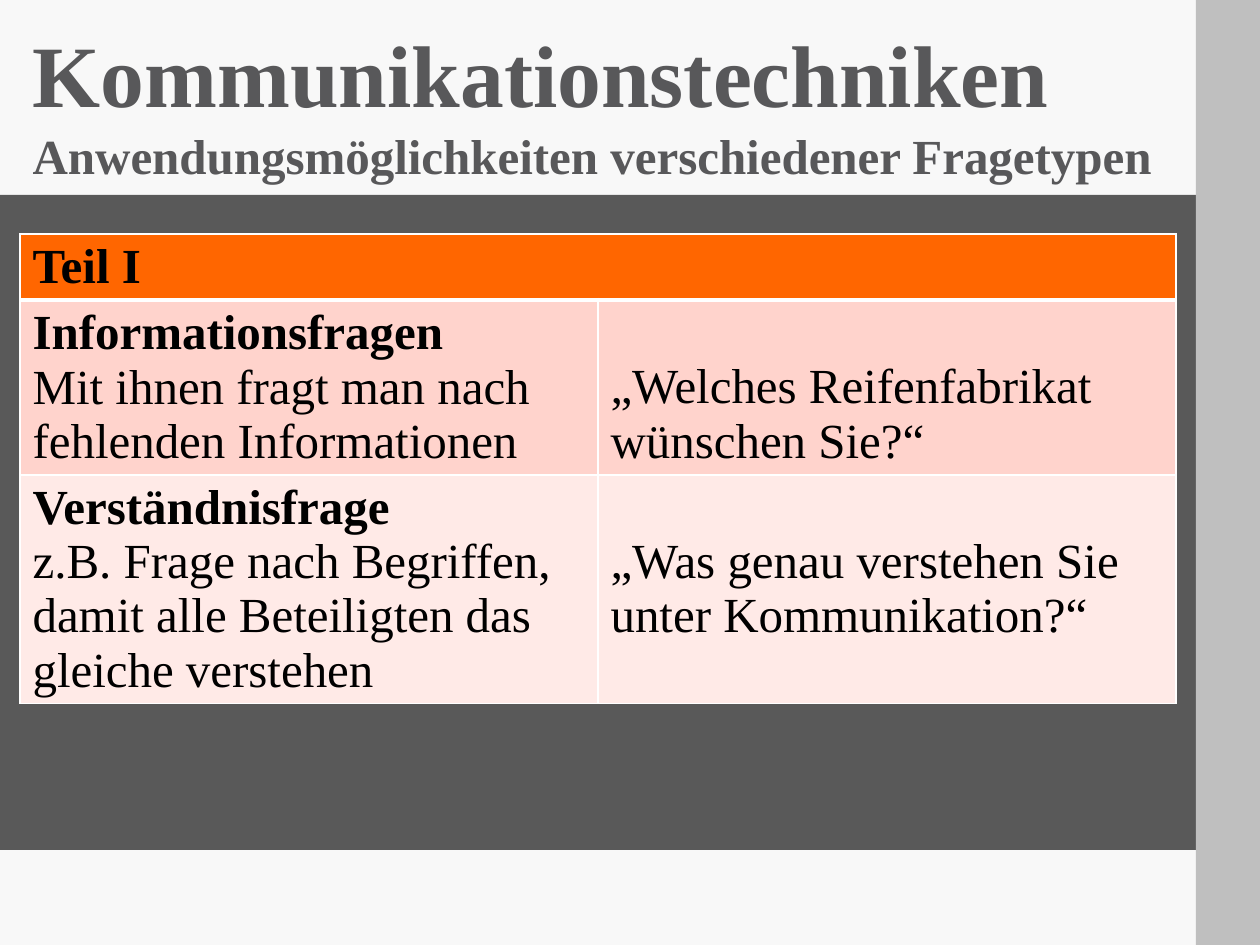
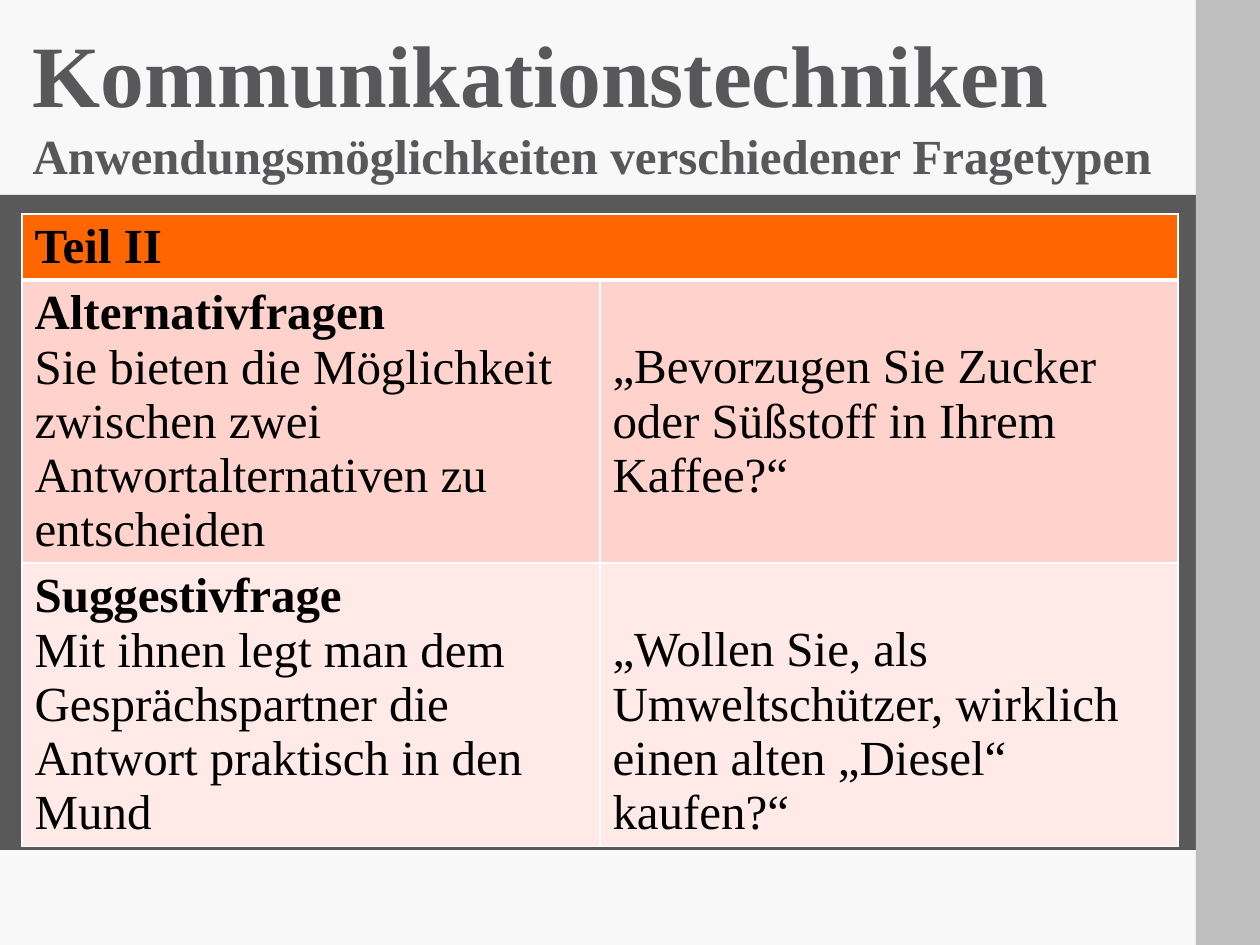
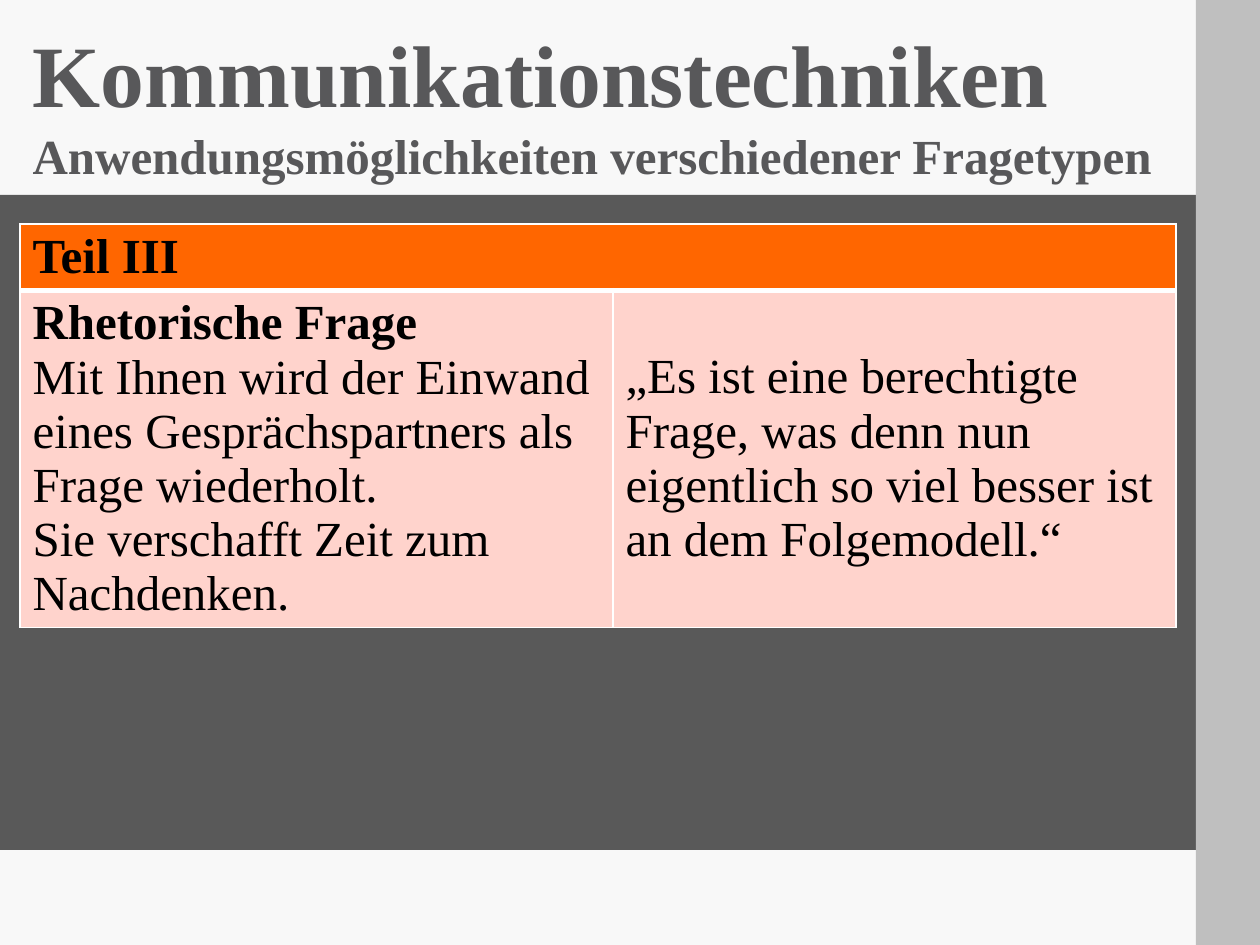
"""Build three slides on question types, each with a title and a table."""
from dataclasses import dataclass

from lxml.etree import SubElement
from pptx import Presentation
from pptx.dml.color import RGBColor
from pptx.enum.shapes import MSO_SHAPE as Shape
from pptx.enum.text import MSO_ANCHOR as Anchor, MSO_AUTO_SIZE as Fit, PP_ALIGN as Align
from pptx.oxml.ns import qn
from pptx.util import Emu, Pt

FONT = "Times New Roman"
PAPER = RGBColor(0xF8, 0xF8, 0xF8)
DARK = RGBColor(0x59, 0x59, 0x59)
SILVER = RGBColor(0xBF, 0xBF, 0xBF)
SLATE = RGBColor(0x58, 0x58, 0x5A)
BLACK = RGBColor(0, 0, 0)
WHITE = RGBColor(0xFF, 0xFF, 0xFF)
ORANGE = RGBColor(0xFF, 0x66, 0x00)
ROSE = RGBColor(0xFF, 0xD3, 0xCC)
BLUSH = RGBColor(0xFF, 0xEA, 0xE7)
TINTS = (ROSE, BLUSH)

WIDTH, HEIGHT = 1260, 945
LEFT, SPAN = 20, 1156
LINE, PAD = 54, 6
BODY = 28
THIN, THICK = 1, 3


@dataclass(frozen=True)
class Band:
    left: int
    top: int
    width: int
    height: int
    color: RGBColor


@dataclass(frozen=True)
class Entry:
    name: str
    notes: tuple[str, ...]
    quote: str
    lines: int


@dataclass(frozen=True)
class Part:
    head: str
    left: int
    top: int
    split: int
    rows: tuple[Entry, ...]


BANDS = (
    Band(0, 195, 1197, 655, DARK),
    Band(1196, 0, 64, HEIGHT, SILVER),
)
TITLE = (
    ("Kommunikationstechniken", 50),
    ("Anwendungsmöglichkeiten verschiedener Fragetypen", BODY),
)
PARTS = (
    Part("Teil I", LEFT, 234, 578, (
        Entry("Informationsfragen",
              ("Mit ihnen fragt man nach fehlenden Informationen",),
              "„Welches Reifenfabrikat wünschen Sie?“", 3),
        Entry("Verständnisfrage",
              ("z.B. Frage nach Begriffen, damit alle Beteiligten das gleiche verstehen",),
              "„Was genau verstehen Sie unter Kommunikation?“", 4),
    )),
    Part("Teil II", LEFT + 2, 214, 578, (
        Entry("Alternativfragen",
              ("Sie bieten die Möglichkeit zwischen zwei Antwortalternativen zu entscheiden",),
              "„Bevorzugen Sie Zucker oder Süßstoff in Ihrem Kaffee?“", 5),
        Entry("Suggestivfrage",
              ("Mit ihnen legt man dem Gesprächspartner die Antwort praktisch in den Mund",),
              "„Wollen Sie, als Umweltschützer, wirklich einen alten „Diesel“ kaufen?“", 5),
    )),
    Part("Teil III", LEFT, 224, 593, (
        Entry("Rhetorische Frage",
              ("Mit Ihnen wird der Einwand eines Gesprächspartners als Frage wiederholt.",
               "Sie verschafft Zeit zum Nachdenken."),
              "„Es ist eine berechtigte Frage, was denn nun eigentlich so viel besser ist "
              "an dem Folgemodell.“", 6),
    )),
)


def px(count: int) -> Emu:
    """Turn px into EMU."""
    return Emu(count * 914400 // 126)


def add_run(para, text: str, size: int, color: RGBColor, bold: bool) -> None:
    """Add one run of text to a paragraph."""
    run = para.add_run()
    run.text = text
    font = run.font
    font.name, font.size, font.bold = FONT, Pt(size), bold
    font.color.rgb = color


def next_para(frame, index: int):
    """Return the first paragraph or a new one."""
    return frame.add_paragraph() if index else frame.paragraphs[0]


def draw_band(slide, band: Band) -> None:
    """Draw one plain band."""
    shape = slide.shapes.add_shape(
        Shape.RECTANGLE, px(band.left), px(band.top), px(band.width), px(band.height))
    shape.shadow.inherit = False
    shape.fill.solid()
    shape.fill.fore_color.rgb = band.color
    shape.line.fill.background()


def draw_title(slide) -> None:
    """Place and fill the title."""
    title = slide.shapes.title
    title.left, title.top = px(LEFT), px(20)
    title.width, title.height = px(SPAN), px(158)
    frame = title.text_frame
    frame.word_wrap, frame.auto_size = True, Fit.NONE
    frame.vertical_anchor = Anchor.TOP
    frame.margin_top = frame.margin_bottom = 0
    for index, (text, size) in enumerate(TITLE):
        para = next_para(frame, index)
        para.alignment = Align.LEFT
        add_run(para, text, size, SLATE, True)


def add_edge(cell, side: str, width: int) -> None:
    """Add a white border to one side of a cell."""
    edge = SubElement(cell._tc.get_or_add_tcPr(), qn(f"a:ln{side}"), w=str(Pt(width)))
    fill = SubElement(edge, qn("a:solidFill"))
    SubElement(fill, qn("a:srgbClr"), val=str(WHITE))


def fill_cell(cell, texts: list[tuple[str, bool]], color: RGBColor,
              upper: int = THIN, lower: int = THIN) -> None:
    """Write and style one cell."""
    for side, width in zip("LRTB", (THIN, THIN, upper, lower)):
        add_edge(cell, side, width)
    cell.fill.solid()
    cell.fill.fore_color.rgb = color
    cell.margin_top = cell.margin_bottom = px(PAD)
    for index, (text, bold) in enumerate(texts):
        add_run(next_para(cell.text_frame, index), text, BODY, BLACK, bold)


def draw_table(slide, part: Part) -> None:
    """Draw the table of one part."""
    sizes = [2 * PAD + LINE * count for count in (1, *(row.lines for row in part.rows))]
    table = slide.shapes.add_table(
        len(sizes), 2, px(part.left), px(part.top), px(SPAN), px(sum(sizes))).table
    table.first_row = table.horz_banding = False
    for col, width in zip(table.columns, (part.split, SPAN - part.split)):
        col.width = px(width)
    for row, size in zip(table.rows, sizes):
        row.height = px(size)

    head, rest = table.cell(0, 0), table.cell(0, 1)
    head.merge(rest)
    fill_cell(head, [(part.head, True)], ORANGE, lower=THICK)
    fill_cell(rest, [], ORANGE, lower=THICK)
    for index, entry in enumerate(part.rows):
        tint = TINTS[index % len(TINTS)]
        upper = THIN if index else THICK
        texts = [(entry.name, True), *((note, False) for note in entry.notes)]
        fill_cell(table.cell(index + 1, 0), texts, tint, upper)
        quote = table.cell(index + 1, 1)
        fill_cell(quote, [(entry.quote, False)], tint, upper)
        quote.margin_top = px(PAD + LINE)


def main() -> None:
    """Build and save the slides."""
    deck = Presentation()
    deck.slide_width, deck.slide_height = px(WIDTH), px(HEIGHT)
    back = deck.slide_master.background.fill
    back.solid()
    back.fore_color.rgb = PAPER
    for part in PARTS:
        slide = deck.slides.add_slide(deck.slide_layouts.get_by_name("Title Only"))
        for band in BANDS:
            draw_band(slide, band)
        draw_title(slide)
        draw_table(slide, part)
    deck.save("out.pptx")


if __name__ == "__main__":
    main()
